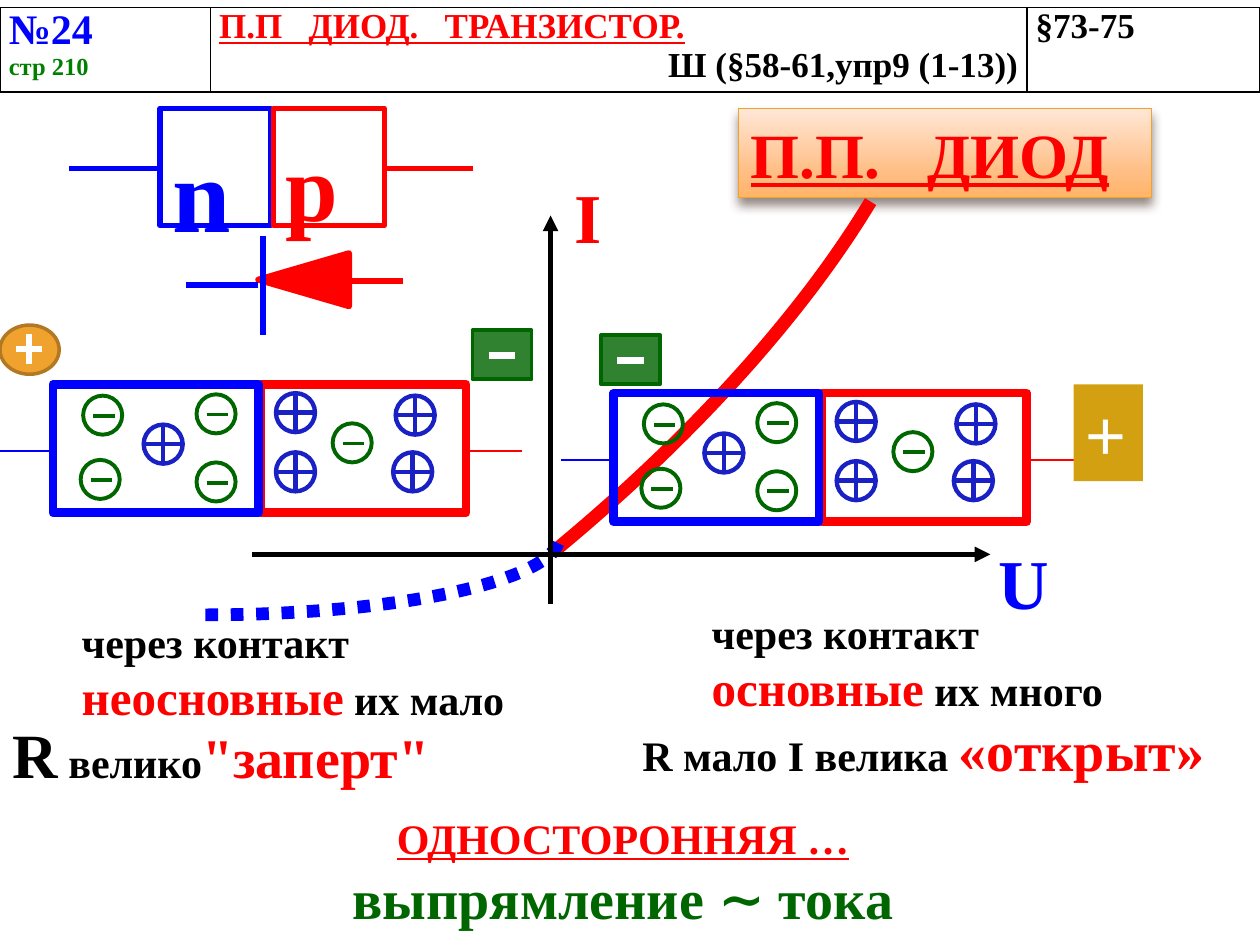
from copy import deepcopy
from dataclasses import dataclass

from lxml import etree
from pptx import Presentation
from pptx.dml.color import RGBColor
from pptx.enum.dml import MSO_LINE
from pptx.enum.shapes import MSO_CONNECTOR, MSO_SHAPE
from pptx.enum.text import MSO_ANCHOR, MSO_AUTO_SIZE, PP_ALIGN
from pptx.oxml.ns import qn
from pptx.util import Inches, Pt

RECT, OVAL = MSO_SHAPE.RECTANGLE, MSO_SHAPE.OVAL
CROSS, WEDGE = MSO_SHAPE.FLOWCHART_OR, MSO_SHAPE.ISOSCELES_TRIANGLE
LEFT, MID, RIGHT = PP_ALIGN.LEFT, PP_ALIGN.CENTER, PP_ALIGN.RIGHT
DOTS = MSO_LINE.ROUND_DOT


@dataclass(frozen=True)
class Theme:
    serif: str = "Times New Roman"
    sans: str = "Arial"
    red: str = "FF0000"
    blue: str = "0000FF"
    navy: str = "1921C5"
    green: str = "006600"
    leaf: str = "008000"
    black: str = "000000"
    white: str = "FFFFFF"
    amber: str = "F0A22E"
    brown: str = "B27822"
    gold: str = "D2A010"
    shade: str = "4E3B30"
    blend: tuple = ((0, "FFE7D7"), (0.72, "FFBE84"), (1, "FFB468"))
    page: int = 14
    head: int = 20
    body: int = 24
    key: int = 28
    big: int = 32
    title: int = 36
    axis: int = 40
    p: int = 54
    n: int = 60


T = Theme()


def rgb(code):
    return RGBColor.from_string(code)


def node(parent, tag, **attrs):
    return etree.SubElement(parent, qn(tag), {k: str(v) for k, v in attrs.items()})


def write(par, text, size=T.body, color=T.black, bold=True, under=False,
          font=T.serif, align=LEFT):
    par.alignment = align
    run = par.add_run()
    run.text = text
    face = run.font
    face.name, face.size, face.bold, face.underline = font, Pt(size), bold, under
    face.color.rgb = rgb(color)


def label(slide, x, y, w, h, *runs, align=LEFT):
    box = slide.shapes.add_textbox(Inches(x), Inches(y), Inches(w), Inches(h))
    box.text_frame.word_wrap = True
    for text, size, color, *under in runs:
        write(box.text_frame.paragraphs[0], text, size, color,
              under=bool(under), align=align)


def stroke(line, color, width):
    line.color.rgb = rgb(color)
    line.width = Pt(width)


def block(slide, kind, x, y, w, h, fill=None, edge=None, width=1):
    shape = slide.shapes.add_shape(kind, Inches(x), Inches(y), Inches(w), Inches(h))
    shape.shadow.inherit = False
    if fill:
        shape.fill.solid()
        shape.fill.fore_color.rgb = rgb(fill)
    else:
        shape.fill.background()
    if edge:
        stroke(shape.line, edge, width)
    else:
        shape.line.fill.background()
    shape.text_frame.vertical_anchor = MSO_ANCHOR.TOP
    return shape


def wire(slide, x1, y1, x2, y2, color, width, arrow=False):
    line = slide.shapes.add_connector(
        MSO_CONNECTOR.STRAIGHT, Inches(x1), Inches(y1), Inches(x2), Inches(y2))
    stroke(line.line, color, width)
    props = line._element.spPr
    if arrow:
        node(props.find(qn("a:ln")), "a:tailEnd", type="triangle")
    node(props, "a:effectLst")


def curve(slide, ends, color, width, dash=None, steps=40):
    """Trace a cubic curve through its four control points."""
    dots = []
    for i in range(steps + 1):
        t = i / steps
        parts = ((1 - t) ** 3, 3 * t * (1 - t) ** 2, 3 * t * t * (1 - t), t ** 3)
        dots.append(tuple(Inches(sum(k * p[a] for k, p in zip(parts, ends)))
                          for a in (0, 1)))
    path = slide.shapes.build_freeform(*dots[0])
    path.add_line_segments(dots[1:], close=False)
    shape = path.convert_to_shape()
    shape.shadow.inherit = False
    shape.fill.background()
    stroke(shape.line, color, width)
    if dash:
        shape.line.dash_style = dash


def header(slide, x, y, w, h):
    cols = (1.67, 6.48, 1.85)
    cells = (
        (("№24", T.body, T.blue, False, LEFT), ("стр 210", T.page, T.leaf, False, LEFT)),
        (("П.П   ДИОД.   ТРАНЗИСТОР.", T.head, T.red, True, LEFT),
         ("Ш (§58-61,упр9 (1-13))", T.head, T.black, False, RIGHT)),
        (("§73-75", T.head, T.black, False, LEFT),),
    )
    table = slide.shapes.add_table(
        1, len(cols), Inches(x), Inches(y), Inches(w), Inches(h)).table
    table.first_row = table.horz_banding = False
    for i, (width, lines) in enumerate(zip(cols, cells)):
        table.columns[i].width = Inches(width)
        cell = table.cell(0, i)
        cell.margin_left = cell.margin_right = Inches(0.07)
        cell.margin_top = cell.margin_bottom = 0
        for j, (text, size, color, under, align) in enumerate(lines):
            frame = cell.text_frame
            par = frame.add_paragraph() if j else frame.paragraphs[0]
            write(par, text, size, color, under=under, align=align)
        props = cell._tc.get_or_add_tcPr()
        for side in "LRTB":
            edge = node(props, f"a:ln{side}", w=Pt(1))
            node(node(edge, "a:solidFill"), "a:srgbClr", val=T.black)
        cell.fill.solid()
        cell.fill.fore_color.rgb = rgb(T.white)


def banner(slide, x, y, w, h):
    title = slide.shapes.title
    title.left, title.top, title.width, title.height = map(Inches, (x, y, w, h))
    frame = title.text_frame
    frame.auto_size, frame.vertical_anchor = MSO_AUTO_SIZE.NONE, MSO_ANCHOR.MIDDLE
    write(frame.paragraphs[0], "П.П.   ДИОД", T.title, T.red, under=True)
    title.fill.gradient()
    title.fill.gradient_angle = 270
    props = title._element.spPr
    stops = props.find(".//" + qn("a:gsLst"))
    stops.append(deepcopy(stops[-1]))
    for stop, (place, color) in zip(title.fill.gradient_stops, T.blend):
        stop.position, stop.color.rgb = place, rgb(color)
    stroke(title.line, T.amber, 0.79)
    cast = node(node(props, "a:effectLst"), "a:outerShdw",
                blurRad=Pt(6), dist=Pt(4), dir=5400000, rotWithShape=0)
    node(node(cast, "a:srgbClr", val=T.shade), "a:alpha", val=60000)


def pair(slide, x, y):
    """The n and p halves with their leads."""
    for left, color, text, size, start, end in (
            (0.72, T.blue, "n", T.n, 0.72, 0), (1.62, T.red, "p", T.p, 3.2, 2.48)):
        half = block(slide, RECT, x + left, y, 0.88, 0.93, T.white, color, 3)
        half.text_frame.margin_top = Inches(0.15)
        write(half.text_frame.paragraphs[0], text, size, color)
        wire(slide, x + start, y + 0.48, x + end, y + 0.48, color, 3)


def symbol(slide, x, y):
    """The circuit sign of a diode."""
    block(slide, WEDGE, x + 0.72, y - 0.01, 0.42, 0.72, T.red, T.red, 3.5).rotation = 270
    wire(slide, x + 0.61, y, x + 0.61, y + 0.79, T.blue, 3.5)
    wire(slide, x + 0.57, y + 0.39, x, y + 0.39, T.blue, 3.5)
    wire(slide, x + 1.72, y + 0.36, x + 1.16, y + 0.36, T.red, 3.5)


def crystal(slide, x, y):
    """A junction with its electrons and holes."""
    for left, lead, color in ((1.65, 3.28, T.red), (0, -0.42, T.blue)):
        block(slide, RECT, x + left, y, 1.63, 1.02, edge=color, width=5)
        wire(slide, x + lead, y + 0.53, x + lead + 0.44, y + 0.53, color, 0.75)
    for dx, dy in ((1.14, 0.62), (1.14, 0.08), (0.24, 0.09), (0.22, 0.6), (2.22, 0.31)):
        wire(slide, x + dx + 0.08, y + dy + 0.16, x + dx + 0.25, y + dy + 0.16,
             T.green, 2.25)
        block(slide, OVAL, x + dx, y + dy, 0.31, 0.31, edge=T.green, width=2.25)
    for dx, dy in ((0.72, 0.32), (1.77, 0.07), (1.77, 0.54), (2.7, 0.54), (2.72, 0.09)):
        block(slide, CROSS, x + dx, y + dy, 0.31, 0.31, T.white, T.navy, 2.5)


def axes(slide, x, y):
    """Current and voltage axes crossing at the given point."""
    wire(slide, x - 2.37, y, x + 3.49, y, T.black, 3, arrow=True)
    wire(slide, x, y + 0.39, x, y - 2.69, T.black, 3, arrow=True)
    label(slide, x + 3.46, y - 0.17, 0.78, 0.77, ("U", T.axis, T.blue))
    label(slide, x + 0.09, y - 3.07, 0.7, 0.77, ("I", T.axis, T.red))


def minus(slide, x, y):
    pad = block(slide, RECT, x, y, 0.47, 0.39, T.green, T.green, 2)
    node(pad._element.spPr.find(qn("a:solidFill"))[0], "a:alpha", val=81000)
    wire(slide, x + 0.13, y + 0.2, x + 0.34, y + 0.2, T.white, 3.75)


def plus(slide, x, y):
    block(slide, OVAL, x, y, 0.47, 0.39, T.amber, T.brown, 2)
    wire(slide, x + 0.13, y + 0.19, x + 0.33, y + 0.19, T.white, 3.75)
    wire(slide, x + 0.23, y + 0.31, x + 0.23, y + 0.07, T.white, 3.75)


def notes(slide):
    """What passes the contact in each direction, and the result."""
    label(slide, 0.55, 4.84, 3.75, 0.98, ("через контакт ", T.body, T.black),
          ("неосновные", T.key, T.red), (" их мало", T.body, T.black))
    label(slide, 0, 5.63, 3.98, 0.71, ("R", T.title, T.black),
          (" велико", T.body, T.black), ('"заперт"', T.big, T.red))
    label(slide, 5.55, 4.77, 3.36, 0.98, ("через контакт ", T.body, T.black),
          ("основные", T.key, T.red), (" их много", T.body, T.black))
    label(slide, 5, 5.63, 5, 0.64, ("R мало I велика ", T.body, T.black),
          ("«открыт»", T.big, T.red))
    label(slide, 2.25, 6.4, 5.39, 1.35, ("ОДНОСТОРОННЯЯ … ", T.body, T.red, True),
          ("выпрямление ∼ тока", T.big, T.green), align=MID)


def main():
    deck = Presentation()
    deck.slide_width, deck.slide_height = Inches(10), Inches(7.5)
    slide = deck.slides.add_slide(deck.slide_layouts[5])
    header(slide, 0, 0.06, 10, 0.67)
    banner(slide, 5.86, 0.86, 3.28, 0.71)
    notes(slide)
    pair(slide, 0.55, 0.86)
    symbol(slide, 1.48, 1.87)
    # Forward and reverse branches
    curve(slide, ((4.38, 4.39), (5.44, 3.52), (6.35, 2.53), (6.91, 1.6)), T.red, 7.5)
    curve(slide, ((1.63, 4.88), (3.18, 4.88), (4.44, 4.6), (4.44, 4.26)),
          T.blue, 7.25, DOTS)
    # Reverse connection on the left, forward on the right
    crystal(slide, 0.42, 3.05)
    axes(slide, 4.37, 4.4)
    plus(slide, 0, 2.58)
    minus(slide, 3.75, 2.62)
    crystal(slide, 4.87, 3.12)
    minus(slide, 4.77, 2.66)
    pole = block(slide, RECT, 8.52, 3.05, 0.55, 0.77, T.gold)
    write(pole.text_frame.paragraphs[0], "+", T.axis, T.white, bold=False, font=T.sans)
    deck.save("out.pptx")


if __name__ == "__main__":
    main()
